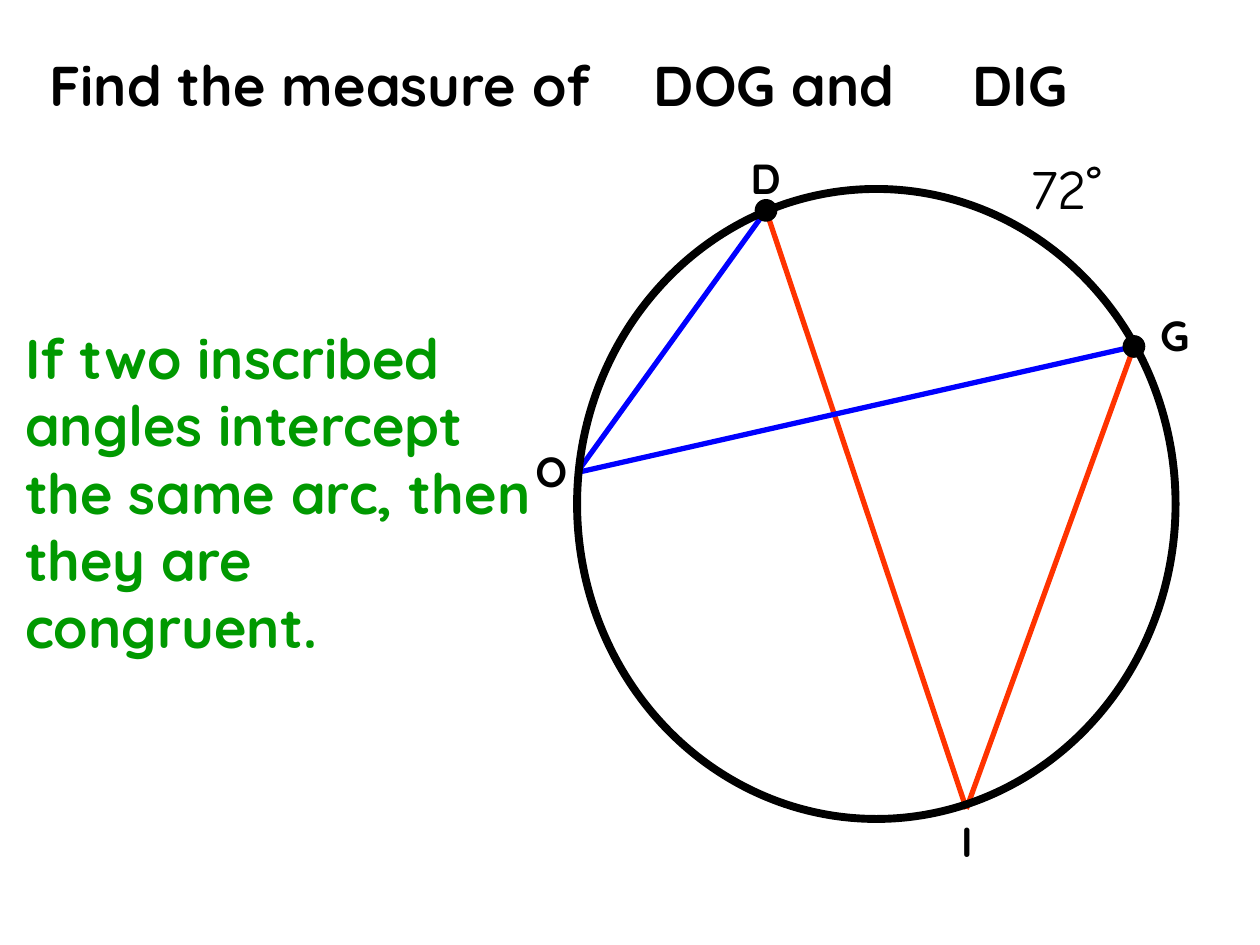
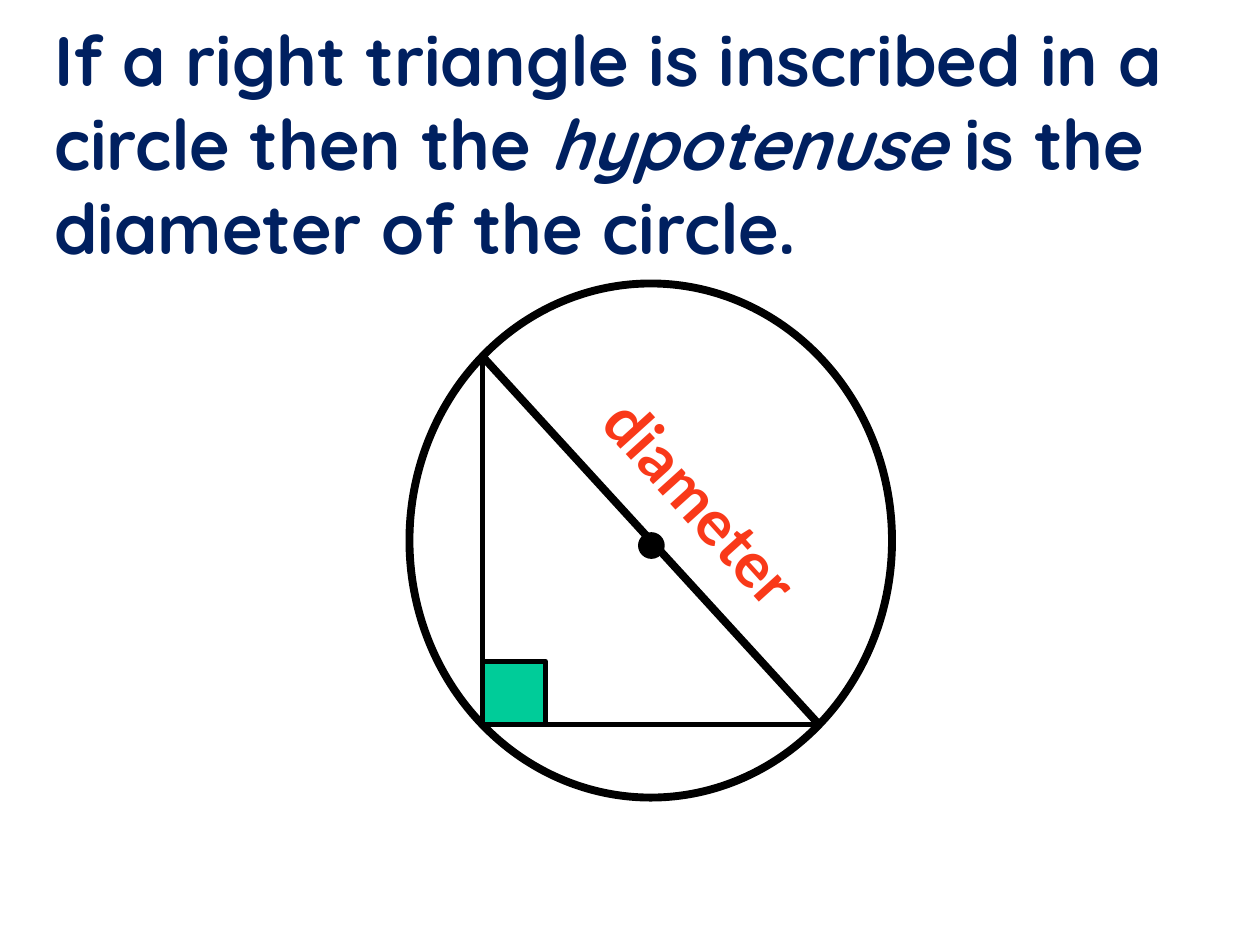
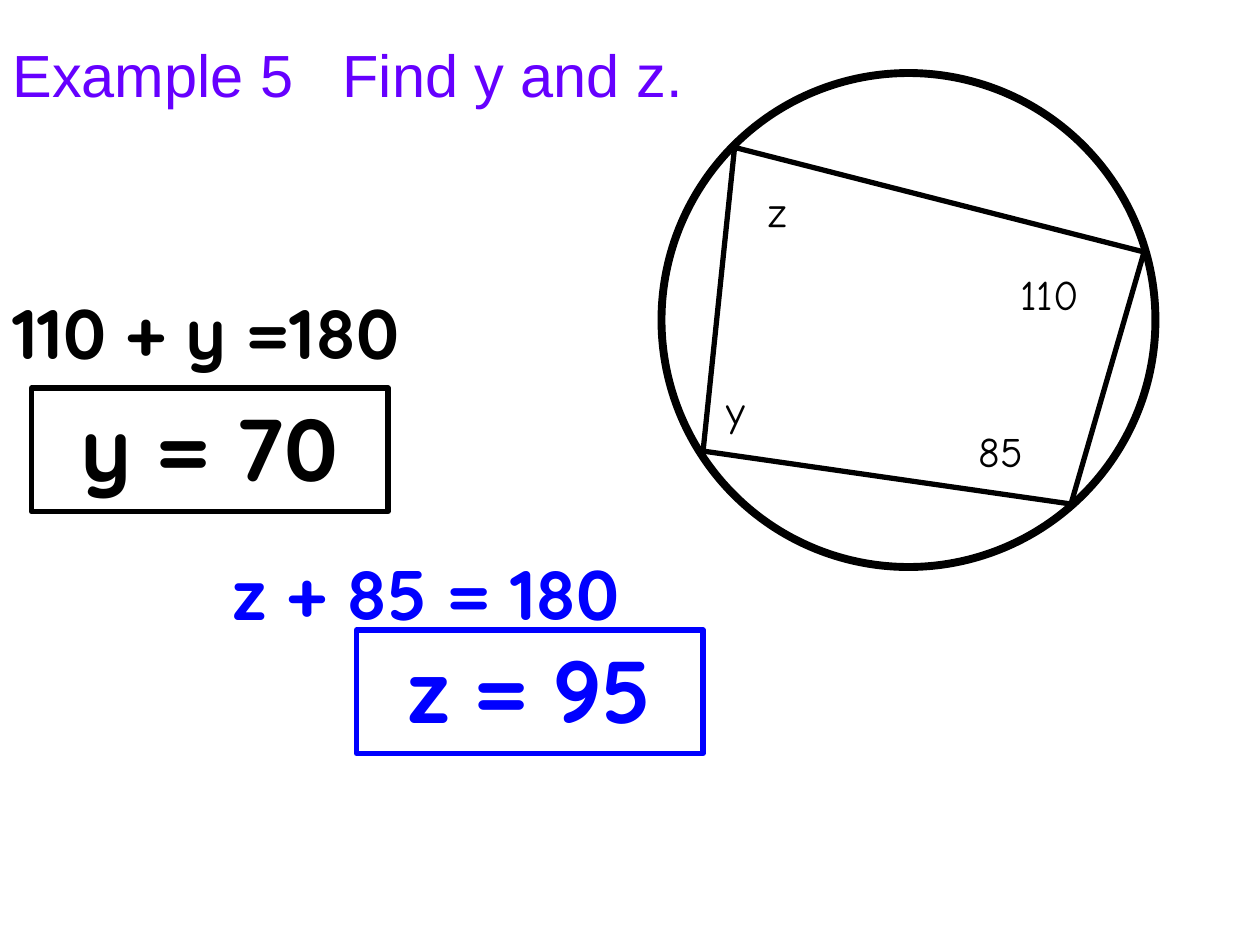
"""Build three slides on angles and polygons inscribed in circles."""
from dataclasses import dataclass

from lxml import etree
from pptx import Presentation
from pptx.dml.color import RGBColor
from pptx.enum.shapes import MSO_CONNECTOR, MSO_SHAPE
from pptx.enum.text import MSO_ANCHOR, MSO_AUTO_SIZE, PP_ALIGN
from pptx.oxml.ns import qn
from pptx.util import Inches, Pt

LINE = MSO_CONNECTOR.STRAIGHT
OVAL, RECT = MSO_SHAPE.OVAL, MSO_SHAPE.RECTANGLE
TOP, FIXED = MSO_ANCHOR.TOP, MSO_AUTO_SIZE.NONE
LEFT, MID = PP_ALIGN.LEFT, PP_ALIGN.CENTER


@dataclass(frozen=True)
class Theme:
    ink: str = "000000"
    paper: str = "FFFFFF"
    blue: str = "0000FF"
    orange: str = "FF3300"
    green: str = "009900"
    navy: str = "002060"
    teal: str = "00CC99"
    red: str = "F93919"
    violet: str = "6600FF"
    main: str = "Quicksand"
    hand: str = "Comic Neue"
    plain: str = "Arial"
    tag: str = "Lato"
    small: int = 24
    body: int = 32
    title: int = 34
    word: int = 36
    large: int = 40
    huge: int = 50
    thin: float = 0.75
    side: float = 3
    ring: float = 4.5
    dot: float = 0.17


T = Theme()

ARC = {
    "title": "Find the measure of\tDOG and\tDIG",
    "rule": "If two inscribed angles intercept the same arc, then they are congruent.",
    "points": {"D": (6.08, 1.67), "O": (4.58, 3.75), "G": (9, 2.75), "I": (7.67, 6.42)},
    "chords": [("DI", T.orange), ("IG", T.orange), ("GO", T.blue), ("DO", T.blue)],
    "names": {"D": (5.86, 1.16), "O": (4.15, 3.49), "G": (9.11, 2.41), "I": (7.53, 6.42)},
    "dots": "DG",
}
RIGHT = {
    "title": [("If a right triangle is inscribed in a circle then the ", False),
              ("hypotenuse", True), (" is the diameter of the circle.", False)],
    "corners": [(3.83, 2.83), (3.83, 5.75), (6.5, 5.75)],
    "mark": 0.5,
}
QUAD = {
    "title": "Example 5\tFind y and z.",
    "corners": [(5.83, 1.17), (5.58, 3.58), (8.5, 4), (9.08, 2)],
    "angles": [("z", 6, 1.42), ("y", 5.67, 3), ("110", 8, 2.08), ("85", 7.67, 3.33)],
    "steps": [("110 + y =180", (0, 2.25, 4.17, 0.77), "y = 70", (0.25, 3.08, 2.83, 0.98), T.ink),
              ("z + 85 = 180", (1.75, 4.32, 3.92, 0.77), "z = 95", (2.83, 5, 2.75, 0.98), T.blue)],
}


def rgb(code):
    return RGBColor.from_string(code)


def inches(vals):
    return [Inches(val) for val in vals]


def write(shape, text, size=T.body, font=T.main, color=T.ink, bold=True, align=LEFT, tabs=()):
    frame = shape.text_frame
    frame.word_wrap, frame.auto_size, frame.vertical_anchor = True, FIXED, TOP
    para = frame.paragraphs[0]
    para.alignment = align
    for part, slant in [(text, False)] if isinstance(text, str) else text:
        run = para.add_run()
        run.text = part
        face = run.font
        face.name, face.size, face.bold, face.italic = font, Pt(size), bold, slant
        face.color.rgb = rgb(color)
    if tabs:
        stops = etree.SubElement(para._p.get_or_add_pPr(), qn("a:tabLst"))
        for stop in tabs:
            etree.SubElement(stops, qn("a:tab"), pos=str(Inches(stop)), algn="l")


def label(shapes, text, box, **fmt):
    write(shapes.add_textbox(*inches(box)), text, **fmt)


def head(slide, text, box, **fmt):
    title = slide.shapes.title
    title.left, title.top, title.width, title.height = inches(box)
    write(title, text, **fmt)


def draw(shapes, kind, box, fill=None, line=T.ink, width=T.side):
    shape = shapes.add_shape(kind, *inches(box))
    shape.shadow.inherit = False
    if fill:
        shape.fill.solid()
        shape.fill.fore_color.rgb = rgb(fill)
    else:
        shape.fill.background()
    if line:
        shape.line.color.rgb = rgb(line)
        shape.line.width = Pt(width)
    else:
        shape.line.fill.background()
    return shape


def dot(shapes, spot, width=T.thin):
    box = [val - T.dot / 2 for val in spot] + [T.dot] * 2
    draw(shapes, OVAL, box, fill=T.ink, width=width)


def join(shapes, start, end, color=T.ink, width=T.side):
    line = shapes.add_connector(LINE, *inches(start + end))
    line.line.color.rgb = rgb(color)
    line.line.width = Pt(width)
    etree.SubElement(line._element.spPr, qn("a:effectLst"))


def arc(slide):
    shapes, points = slide.shapes, ARC["points"]
    head(slide, ARC["title"], (0.29, 0.35, 9.04, 0.64), tabs=(4.8, 7.33))
    for (start, end), color in ARC["chords"]:
        join(shapes, points[start], points[end], color)
    label(shapes, "72˚", (7.75, 1.17, 1.42, 0.63), font=T.hand, bold=False, align=MID)
    label(shapes, ARC["rule"], (0.1, 2.52, 4.29, 2.8), color=T.green)
    draw(shapes, OVAL, (4.58, 1.5, 4.75, 5), width=T.ring)
    for name in ARC["dots"]:
        dot(shapes, points[name])
    for name, spot in ARC["names"].items():
        label(shapes, name, spot + (0.48, 0.51), size=T.small)


def right(slide):
    shapes, mark = slide.shapes, RIGHT["mark"]
    apex, base, end = RIGHT["corners"]
    head(slide, RIGHT["title"], (0.33, 0.08, 9.42, 2.79), size=T.large, color=T.navy)
    draw(shapes, OVAL, (3.25, 2.25, 3.83, 4.08), fill=T.paper, width=T.ring)
    join(shapes, apex, base)
    join(shapes, base, end)
    draw(shapes, RECT, (base[0], base[1] - mark, mark, mark), fill=T.teal)
    word = draw(shapes, RECT, (4.01, 3.63, 3.12, 0.7), fill=T.paper, line=None)
    word.rotation = 47.9
    write(word, "diameter", size=T.word, font=T.tag, color=T.red, align=MID)
    dot(shapes, (5.17, 4.33), width=T.side)
    join(shapes, apex, end, width=T.ring)


def quad(slide):
    shapes, corners = slide.shapes, QUAD["corners"]
    head(slide, QUAD["title"], (0, 0.25, 6.17, 0.67), size=T.title, font=T.plain,
         color=T.violet, bold=False, tabs=(2.62,))
    group = shapes.add_group_shape().shapes
    draw(group, OVAL, (5.25, 0.58, 3.92, 3.92), width=T.ring)
    for start, end in zip(corners, corners[1:] + corners[:1]):
        join(group, start, end)
    for text, left, top in QUAD["angles"]:
        label(group, text, (left, top, 0.83, 0.5), size=T.small, font=T.hand, bold=False)
    for sum_, place, answer, box, color in QUAD["steps"]:
        label(shapes, sum_, place, size=T.large, color=color)
        write(draw(shapes, RECT, box, line=color), answer, size=T.huge, color=color, align=MID)


def main():
    deck = Presentation()
    deck.slide_width, deck.slide_height = Inches(10), Inches(7.5)
    for build in (arc, right, quad):
        build(deck.slides.add_slide(deck.slide_layouts[5]))
    deck.save("out.pptx")


if __name__ == "__main__":
    main()
